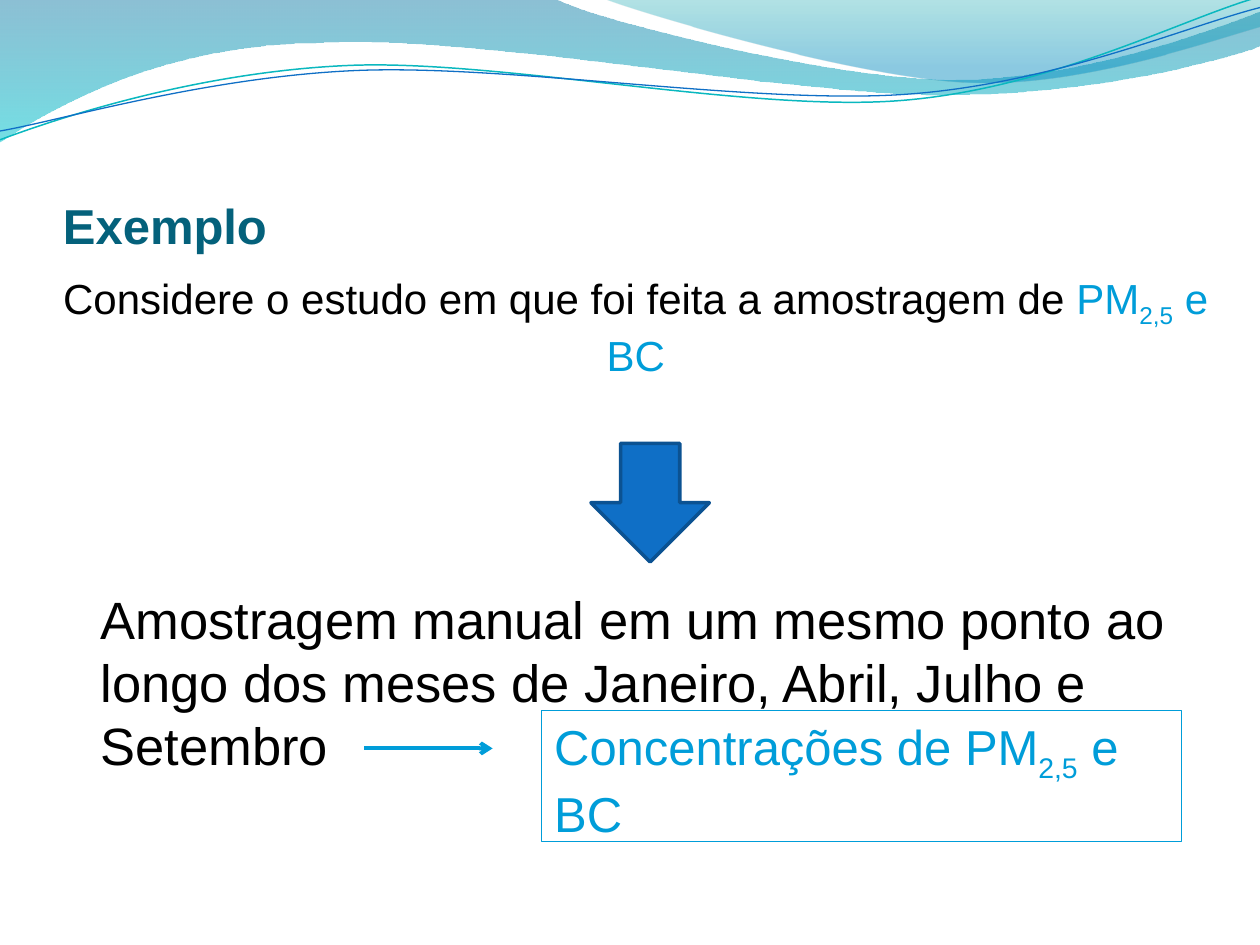
from dataclasses import dataclass
from typing import Optional

from lxml.etree import SubElement
from pptx import Presentation
from pptx.dml.color import RGBColor
from pptx.enum.shapes import MSO_CONNECTOR, MSO_SHAPE
from pptx.enum.text import MSO_ANCHOR, PP_ALIGN
from pptx.oxml.ns import qn
from pptx.util import Inches, Pt


@dataclass(frozen=True)
class Theme:
    font: str = "Arial"
    title: str = "04617B"
    body: str = "000000"
    accent: str = "009DD9"
    arrow: str = "0F6FC6"
    arrow_edge: str = "0B5292"
    teal: str = "0AB8BF"
    title_size: int = 28
    study_size: int = 24
    sampling_size: int = 30
    result_size: int = 28


@dataclass(frozen=True)
class Stop:
    position: float
    color: str
    opacity: int


@dataclass(frozen=True)
class Wave:
    start: tuple
    segments: tuple
    stops: tuple = ()
    line: Optional[str] = None
    width: float = 0


@dataclass(frozen=True)
class Piece:
    text: str
    color: str
    subscript: bool = False


@dataclass(frozen=True)
class TextBlock:
    box: tuple
    size: int
    pieces: tuple
    bold: bool = False
    align: PP_ALIGN = PP_ALIGN.LEFT
    anchor: MSO_ANCHOR = MSO_ANCHOR.TOP
    side_inset: float = 0.1
    bottom_inset: float = 0.05
    outline: Optional[str] = None


THEME = Theme()
UNITS_PER_INCH = 1000
POLLUTANTS = (Piece("2,5", THEME.accent, True), Piece(" e BC", THEME.accent))

WAVES = (
    Wave((0, -0.01), (
        (4.4, -0.01),
        (4.76, 0.17, 6.64, 0.63, 7.58, 0.63),
        (8.53, 0.63, 9.58, 0.26, 10, 0.09),
        (10.01, 0.36),
        (9.83, 0.44, 8.7, 0.76, 7.46, 0.75),
        (6.22, 0.75, 3.82, 0.28, 2.57, 0.34),
        (1.29, 0.35, 0.46, 0.83, -0.01, 1.13),
    ), stops=(Stop(0, "0074A1", 45), Stop(1, "00C6CF", 55))),
    Wave((4.79, -0.01), (
        (5.09, 0.11, 6.82, 0.62, 7.69, 0.65),
        (8.56, 0.69, 9.61, 0.32, 10, 0.21),
        (10, 0),
    ), stops=(Stop(0, "00A1A9", 30), Stop(0.8, "008BBF", 45))),
    Wave((0, 1.11), (
        (0.48, 0.93, 1.58, 0.57, 2.77, 0.52),
        (3.95, 0.47, 5.93, 0.89, 7.13, 0.8),
        (8.33, 0.71, 9.38, 0.15, 9.98, -0.02),
    ), line=THEME.teal, width=0.85),
    Wave((0, 1.04), (
        (0.47, 0.96, 1.64, 0.61, 2.83, 0.56),
        (4.03, 0.51, 5.97, 0.83, 7.17, 0.75),
        (8.36, 0.67, 9.41, 0.21, 10, 0.06),
    ), line=THEME.arrow, width=0.75),
)

TITLE = TextBlock((0.5, 0.77, 9, 1.25), THEME.title_size,
                  (Piece("Exemplo", THEME.title),), bold=True,
                  anchor=MSO_ANCHOR.BOTTOM, side_inset=0, bottom_inset=0)
STUDY = TextBlock((0.2, 2.11, 9.69, 1.31), THEME.study_size,
                  (Piece("Considere o estudo em que foi feita a amostragem de ", THEME.body),
                   Piece("PM", THEME.accent)) + POLLUTANTS,
                  align=PP_ALIGN.CENTER)
SAMPLING = TextBlock((0.7, 4.61, 8.67, 2.12), THEME.sampling_size,
                     (Piece("Amostragem manual em um mesmo ponto ao longo dos meses de "
                            "Janeiro, Abril, Julho e Setembro", THEME.body),))
RESULT = TextBlock((4.3, 5.64, 5.08, 1.04), THEME.result_size,
                   (Piece("Concentrações de PM", THEME.accent),) + POLLUTANTS,
                   outline=THEME.accent)


def rgb(color: str) -> RGBColor:
    return RGBColor.from_string(color)


def to_units(points: list) -> list:
    return [(round(x * UNITS_PER_INCH), round(y * UNITS_PER_INCH)) for x, y in points]


def bend_segments(shape, segments: tuple, left: int, top: int) -> None:
    lines = list(shape.element.spPr.iter(qn("a:lnTo")))
    for line, segment in zip(lines, segments):
        if len(segment) == 2:
            continue
        curve = line.makeelement(qn("a:cubicBezTo"))
        for x, y in to_units(zip(segment[::2], segment[1::2])):
            SubElement(curve, qn("a:pt"), x=str(x - left), y=str(y - top))
        line.getparent().replace(line, curve)


def add_wave(slide, wave: Wave) -> None:
    anchors = to_units([wave.start] + [segment[-2:] for segment in wave.segments])
    builder = slide.shapes.build_freeform(*anchors[0], scale=Inches(1) / UNITS_PER_INCH)
    builder.add_line_segments(anchors[1:], close=bool(wave.stops))
    shape = builder.convert_to_shape()
    bend_segments(shape, wave.segments, *map(min, zip(*anchors)))
    shape.shadow.inherit = False
    if wave.line:
        shape.fill.background()
        shape.line.color.rgb = rgb(wave.line)
        shape.line.width = Pt(wave.width)
        return
    shape.line.fill.background()
    shape.fill.gradient()
    shape.fill.gradient_angle = 270
    for gradient_stop, stop in zip(shape.fill.gradient_stops, wave.stops):
        gradient_stop.position = stop.position
        gradient_stop.color.rgb = rgb(stop.color)
    colors = shape.element.spPr.find(qn("a:gradFill")).iter(qn("a:srgbClr"))
    for color, stop in zip(colors, wave.stops):
        SubElement(color, qn("a:alpha"), val=str(stop.opacity * 1000))


def add_text(slide, block: TextBlock) -> None:
    shape = slide.shapes.add_textbox(*map(Inches, block.box))
    if block.outline:
        shape.line.color.rgb = rgb(block.outline)
        shape.line.width = Pt(0.75)
    frame = shape.text_frame
    frame.word_wrap = True
    frame.vertical_anchor = block.anchor
    frame.margin_left = frame.margin_right = Inches(block.side_inset)
    frame.margin_bottom = Inches(block.bottom_inset)
    paragraph = frame.paragraphs[0]
    paragraph.alignment = block.align
    paragraph.font.name = THEME.font
    paragraph.font.size = Pt(block.size)
    paragraph.font.bold = block.bold
    for piece in block.pieces:
        run = paragraph.add_run()
        run.text = piece.text
        run.font.color.rgb = rgb(piece.color)
        if piece.subscript:
            run.font._element.set("baseline", "-25000")


def add_down_arrow(slide) -> None:
    shape = slide.shapes.add_shape(MSO_SHAPE.DOWN_ARROW, Inches(4.69), Inches(3.52),
                                   Inches(0.94), Inches(0.94))
    shape.shadow.inherit = False
    shape.fill.solid()
    shape.fill.fore_color.rgb = rgb(THEME.arrow)
    shape.line.color.rgb = rgb(THEME.arrow_edge)
    shape.line.width = Pt(2)


def add_result_arrow(slide) -> None:
    connector = slide.shapes.add_connector(MSO_CONNECTOR.STRAIGHT, Inches(2.89), Inches(5.94),
                                           Inches(3.91), Inches(5.94))
    connector.line.color.rgb = rgb(THEME.accent)
    connector.line.width = Pt(2.25)
    SubElement(connector.line._get_or_add_ln(), qn("a:tailEnd"), type="arrow")
    SubElement(connector.element.spPr, qn("a:effectLst"))


def main() -> None:
    presentation = Presentation()
    presentation.slide_width = Inches(10)
    presentation.slide_height = Inches(7.5)
    slide = presentation.slides.add_slide(presentation.slide_layouts[6])
    for wave in WAVES:
        add_wave(slide, wave)
    add_text(slide, TITLE)
    add_text(slide, STUDY)
    add_down_arrow(slide)
    add_text(slide, SAMPLING)
    add_result_arrow(slide)
    add_text(slide, RESULT)
    presentation.save("out.pptx")


if __name__ == "__main__":
    main()
